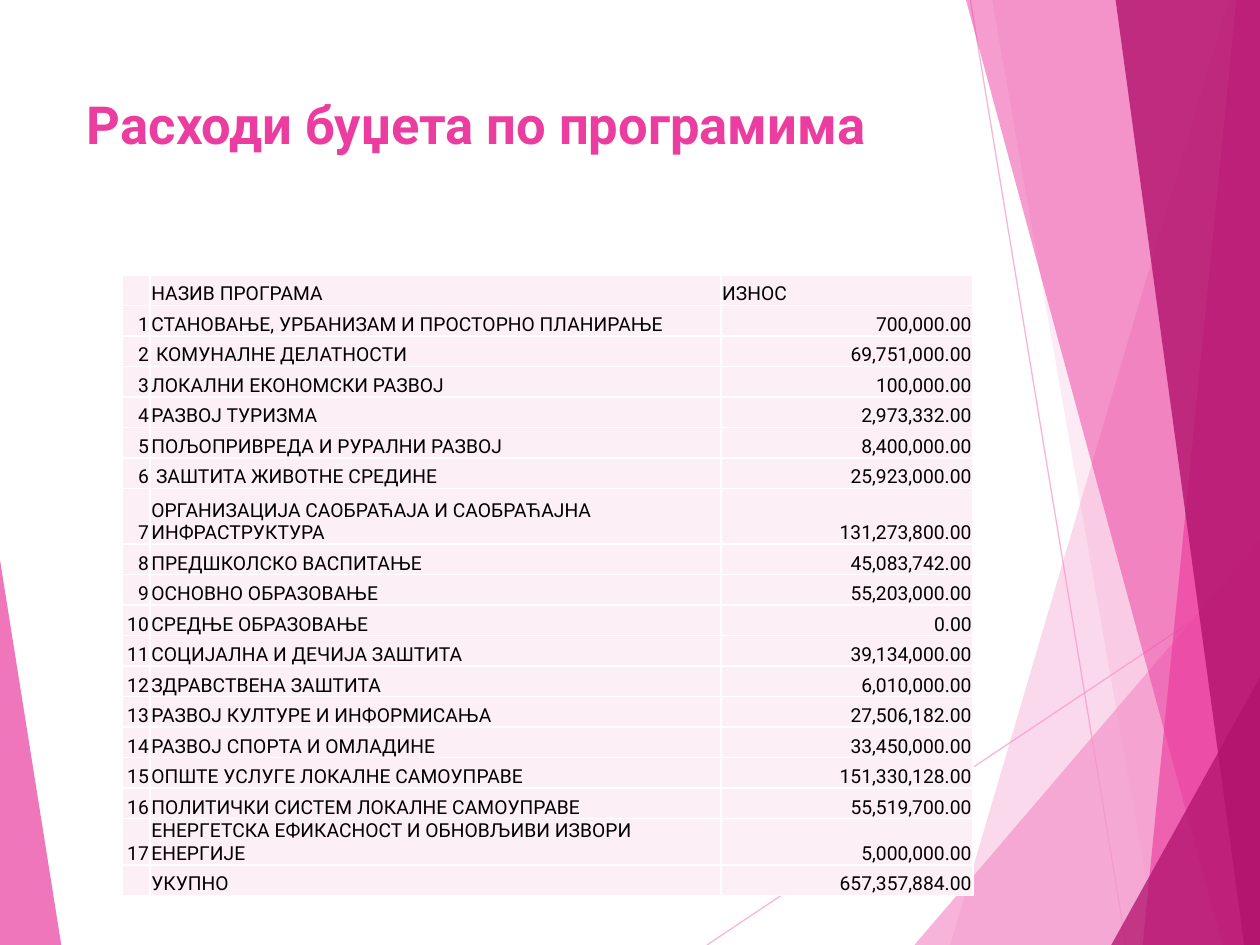
"""Build the slide with budget expenditure by programme."""
import lxml.etree
import pptx
import pptx.dml.color
import pptx.enum.text
import pptx.oxml.ns
import pptx.util

Pt = pptx.util.Pt
qn = pptx.oxml.ns.qn
ALIGN = pptx.enum.text.PP_ALIGN
ANCHOR = pptx.enum.text.MSO_ANCHOR
FONT = "Roboto"
COLORS = {
    "light": "F496CB",
    "pink": "EB3D9F",
    "dark": "B2136D",
    "cell": "FDEFF6",
    "border": "FFFFFF",
    "text": "000000",
}
LINES = [((404, 540), (720, 329)), ((554.5, 0), (643.5, 540))]
FACETS = [
    ("light", 36, [(702, 0), (543, 540), (720, 540), (720, 0)]),
    ("light", 20, [(567, 0), (661.5, 540), (720, 540), (720, 0)]),
    ("light", 72, [(522.5, 540), (720, 309), (720, 540)]),
    ("pink", 50, [(552, 0), (698.5, 540), (720, 540), (720, 0)]),
    ("pink", 66, [(706.5, 0), (653, 540), (720, 540), (720, 0)]),
    ("dark", 80, [(637.5, 0), (711, 540), (720, 540), (720, 0)]),
    ("dark", 76, [(635, 540), (720, 387), (720, 540)]),
    ("pink", 70, [(0, 320), (35, 540), (0, 540)]),
]
COLUMN_WIDTHS = [15.8, 326.2, 144]
ROW_HEIGHT = 17.45
TALL_ROWS = {7: 31.9}
HEADER = ("", "НАЗИВ ПРОГРАМА", "ИЗНОС")
PROGRAMMES = [
    ("СТАНОВАЊЕ, УРБАНИЗАМ И ПРОСТОРНО ПЛАНИРАЊЕ", "700,000.00"),
    (" КОМУНАЛНЕ ДЕЛАТНОСТИ", "69,751,000.00"),
    ("ЛОКАЛНИ ЕКОНОМСКИ РАЗВОЈ", "100,000.00"),
    ("РАЗВОЈ ТУРИЗМА", "2,973,332.00"),
    ("ПОЉОПРИВРЕДА И РУРАЛНИ РАЗВОЈ", "8,400,000.00"),
    (" ЗАШТИТА ЖИВОТНЕ СРЕДИНЕ", "25,923,000.00"),
    ("ОРГАНИЗАЦИЈА САОБРАЋАЈА И САОБРАЋАЈНА ИНФРАСТРУКТУРА", "131,273,800.00"),
    ("ПРЕДШКОЛСКО ВАСПИТАЊЕ", "45,083,742.00"),
    ("ОСНОВНО ОБРАЗОВАЊЕ", "55,203,000.00"),
    ("СРЕДЊЕ ОБРАЗОВАЊЕ", "0.00"),
    ("СОЦИЈАЛНА И ДЕЧИЈА ЗАШТИТА", "39,134,000.00"),
    ("ЗДРАВСТВЕНА ЗАШТИТА", "6,010,000.00"),
    ("РАЗВОЈ КУЛТУРЕ И ИНФОРМИСАЊА", "27,506,182.00"),
    ("РАЗВОЈ СПОРТА И ОМЛАДИНЕ", "33,450,000.00"),
    ("ОПШТЕ УСЛУГЕ ЛОКАЛНЕ САМОУПРАВЕ", "151,330,128.00"),
    ("ПОЛИТИЧКИ СИСТЕМ ЛОКАЛНЕ САМОУПРАВЕ", "55,519,700.00"),
    ("ЕНЕРГЕТСКА ЕФИКАСНОСТ И ОБНОВЉИВИ ИЗВОРИ ЕНЕРГИЈЕ", "5,000,000.00"),
]
TOTAL = ("", "УКУПНО", "657,357,884.00")


def color(name):
    """Return the named colour."""
    return pptx.dml.color.RGBColor.from_string(COLORS[name])


def set_opacity(shape, percent):
    """Make the only solid colour of a shape translucent."""
    for element in shape._element.spPr.iter(qn("a:srgbClr")):
        lxml.etree.SubElement(element, qn("a:alpha"), val=str(percent * 1000))


def add_run(paragraph, text, size, name, bold=False):
    """Append one formatted run."""
    run = paragraph.add_run()
    run.text = text
    run.font.name = FONT
    run.font.size = Pt(size)
    run.font.bold = bold
    run.font.color.rgb = color(name)


def add_line(slide, start, end):
    """Add a thin translucent line."""
    line = slide.shapes.add_connector(
        pptx.enum.shapes.MSO_CONNECTOR.STRAIGHT, *map(Pt, start + end))
    line.line.color.rgb = color("light")
    line.line.width = Pt(0.75)
    set_opacity(line, 70)
    lxml.etree.SubElement(line._element.spPr, qn("a:effectLst"))


def add_facet(slide, name, opacity, points):
    """Add a translucent polygon."""
    corners = [(Pt(x), Pt(y)) for x, y in points]
    builder = slide.shapes.build_freeform(*corners[0])
    builder.add_line_segments(corners[1:], close=True)
    shape = builder.convert_to_shape()
    shape.shadow.inherit = False
    shape.fill.solid()
    shape.fill.fore_color.rgb = color(name)
    shape.line.fill.background()
    set_opacity(shape, opacity)


def place_title(slide, text):
    """Format the title placeholder and bring it in front of the facets."""
    title = slide.shapes.title
    title.left, title.top, title.width, title.height = map(Pt, (42.5, 49, 613.5, 61))
    frame = title.text_frame
    frame.word_wrap = True
    frame.auto_size = pptx.enum.text.MSO_AUTO_SIZE.NONE
    frame.vertical_anchor = ANCHOR.TOP
    paragraph = frame.paragraphs[0]
    paragraph.alignment = ALIGN.LEFT
    add_run(paragraph, text, 30, "pink", bold=True)
    slide.shapes._spTree.append(title._element)


def add_borders(cell):
    """Give a cell thin borders on all sides."""
    properties = cell._tc.get_or_add_tcPr()
    for side in ("a:lnL", "a:lnR", "a:lnT", "a:lnB"):
        border = lxml.etree.SubElement(properties, qn(side), w=str(Pt(1)))
        fill = lxml.etree.SubElement(border, qn("a:solidFill"))
        lxml.etree.SubElement(fill, qn("a:srgbClr"), val=COLORS["border"])


def fill_cell(cell, text, alignment):
    """Format one table cell and write its text."""
    add_borders(cell)
    cell.fill.solid()
    cell.fill.fore_color.rgb = color("cell")
    cell.vertical_anchor = ANCHOR.BOTTOM
    cell.margin_left = cell.margin_right = cell.margin_top = Pt(0.7)
    cell.margin_bottom = 0
    paragraph = cell.text_frame.paragraphs[0]
    paragraph.alignment = alignment
    if text:
        add_run(paragraph, text, 11, "text")
    else:
        lxml.etree.SubElement(paragraph._p, qn("a:endParaRPr"), sz="1100")


def add_programme_table(slide):
    """Add the table of programmes and amounts."""
    numbered = [(str(number), *row) for number, row in enumerate(PROGRAMMES, 1)]
    rows = [HEADER, *numbered, TOTAL]
    heights = [TALL_ROWS.get(index, ROW_HEIGHT) for index in range(len(rows))]
    table = slide.shapes.add_table(
        len(rows), len(HEADER), Pt(70), Pt(157),
        Pt(sum(COLUMN_WIDTHS)), Pt(sum(heights))).table
    table.first_row = table.horz_banding = False
    for column, width in zip(table.columns, COLUMN_WIDTHS):
        column.width = Pt(width)
    for row_index, values in enumerate(rows):
        table.rows[row_index].height = Pt(heights[row_index])
        for column_index, text in enumerate(values):
            left = row_index == 0 or column_index == 1
            fill_cell(table.cell(row_index, column_index), text,
                      ALIGN.LEFT if left else ALIGN.RIGHT)


def main():
    """Build and save the presentation."""
    presentation = pptx.Presentation()
    presentation.slide_width, presentation.slide_height = Pt(720), Pt(540)
    slide = presentation.slides.add_slide(presentation.slide_layouts[5])
    for start, end in LINES:
        add_line(slide, start, end)
    for name, opacity, points in FACETS:
        add_facet(slide, name, opacity, points)
    place_title(slide, "Расходи буџета по програмима")
    add_programme_table(slide)
    presentation.save("out.pptx")


if __name__ == "__main__":
    main()
